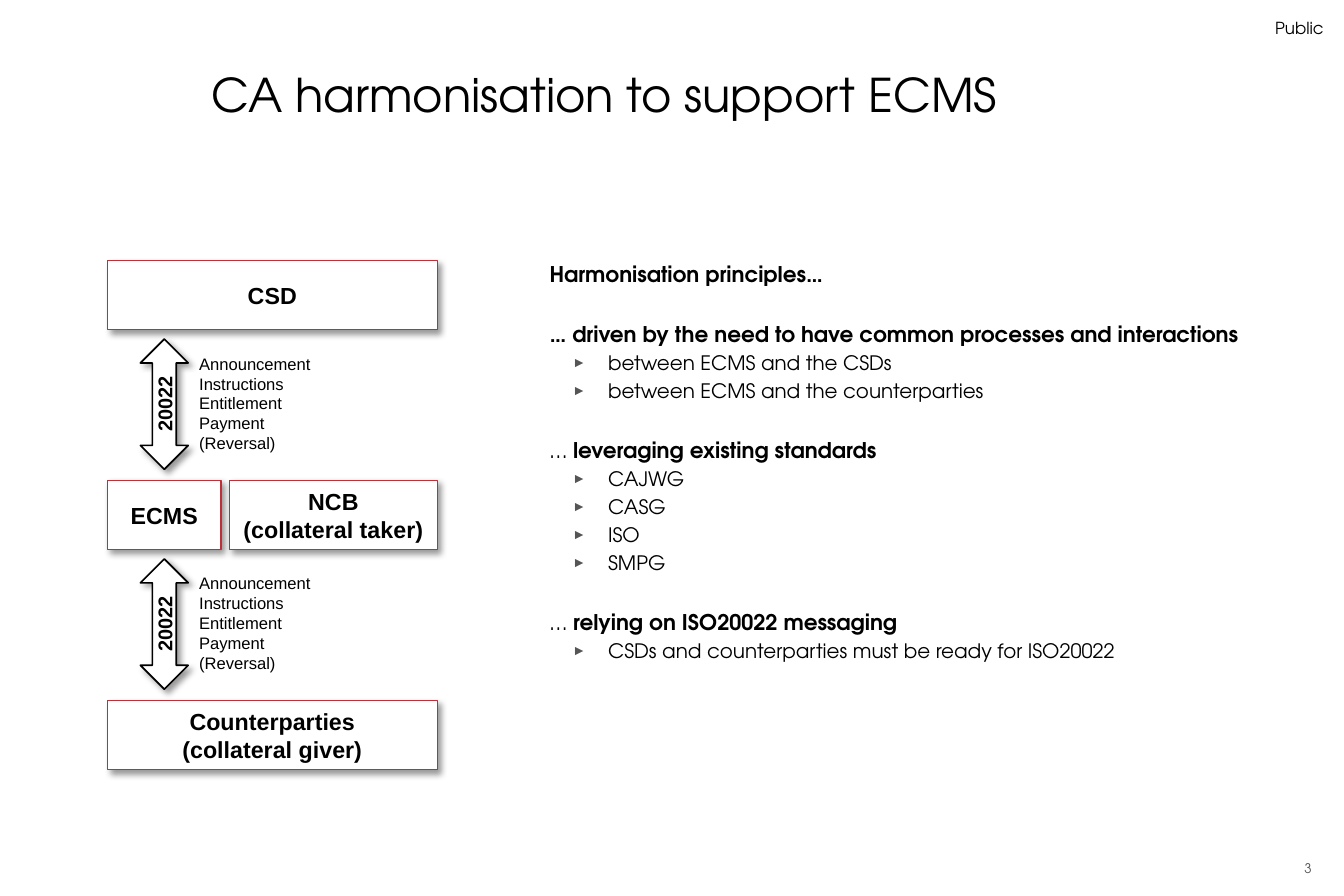
from dataclasses import dataclass
from typing import Any

from lxml.etree import SubElement
from pptx import Presentation
from pptx.dml.color import RGBColor
from pptx.enum.shapes import MSO_SHAPE
from pptx.enum.text import MSO_ANCHOR, MSO_AUTO_SIZE, PP_ALIGN
from pptx.oxml.ns import qn
from pptx.util import Pt

COLORS = {"text": "000000", "muted": "555555", "paper": "FFFFFF", "border": "BF2F38"}
BRAND_FONT = "TeX Gyre Adventor"
DIAGRAM_FONT = "Arial"
NO_MARGINS = dict.fromkeys(("margin_left", "margin_top", "margin_right", "margin_bottom"), 0)


@dataclass(frozen=True)
class Area:
    left: float
    top: float
    width: float
    height: float

    def emu(self) -> tuple:
        return tuple(Pt(n) for n in (self.left, self.top, self.width, self.height))


@dataclass(frozen=True)
class Style:
    size: float
    face: str = BRAND_FONT
    bold: bool = False
    color: str = "text"


@dataclass(frozen=True)
class Party:
    area: Area
    lines: tuple


@dataclass(frozen=True)
class Principle:
    lead: str
    heading: str
    points: tuple = ()
    bold_lead: bool = False


def set_values(target: Any, values: dict) -> None:
    for key, value in values.items():
        setattr(target, key, value)


def add_run(paragraph: Any, text: str, style: Style) -> None:
    run = paragraph.add_run()
    run.text = text
    set_values(run.font, {"size": Pt(style.size), "name": style.face, "bold": style.bold})
    run.font.color.rgb = RGBColor.from_string(COLORS[style.color])


def next_paragraph(frame: Any) -> Any:
    first = frame.paragraphs[0]
    return frame.add_paragraph() if first.runs else first


def write_lines(frame: Any, lines: tuple, style: Style, layout: dict) -> None:
    for line in lines:
        paragraph = next_paragraph(frame)
        set_values(paragraph, layout)
        add_run(paragraph, line, style)


def add_text(slide: Any, area: Area, lines: tuple, style: Style,
             frame_format: dict, layout: dict) -> None:
    frame = slide.shapes.add_textbox(*area.emu()).text_frame
    set_values(frame, frame_format)
    write_lines(frame, lines, style, layout)


def add_shadow(shape: Any) -> None:
    shape.shadow.inherit = False
    effects = shape._element.spPr.find(qn("a:effectLst"))
    shadow = SubElement(effects, qn("a:outerShdw"), blurRad=str(Pt(4)), dist=str(Pt(3)),
                        dir=str(45 * 60000), algn="tl", rotWithShape="0")
    color = SubElement(shadow, qn("a:srgbClr"), val=COLORS["text"])
    SubElement(color, qn("a:alpha"), val="40000")


def add_block(slide: Any, preset: MSO_SHAPE, area: Area, lines: tuple, style: Style,
              border: str, weight: float, rotation: float = 0) -> None:
    block = slide.shapes.add_shape(preset, *area.emu())
    block.rotation = rotation
    block.fill.solid()
    block.fill.fore_color.rgb = RGBColor.from_string(COLORS["paper"])
    block.line.color.rgb = RGBColor.from_string(COLORS[border])
    block.line.width = Pt(weight)
    add_shadow(block)
    set_values(block.text_frame, {"vertical_anchor": MSO_ANCHOR.MIDDLE, "word_wrap": True})
    write_lines(block.text_frame, lines, style, {"alignment": PP_ALIGN.CENTER})


def add_bullet(paragraph: Any) -> None:
    properties = paragraph._p.get_or_add_pPr()
    properties.set("marL", str(Pt(35.3)))
    properties.set("indent", str(Pt(-21.6)))
    color = SubElement(properties, qn("a:buClr"))
    SubElement(color, qn("a:srgbClr"), val=COLORS["muted"])
    SubElement(properties, qn("a:buSzPct"), val="70000")
    SubElement(properties, qn("a:buFont"), typeface=DIAGRAM_FONT)
    SubElement(properties, qn("a:buChar"), char="►")


def add_principles(slide: Any, area: Area, principles: tuple) -> None:
    frame = slide.shapes.add_textbox(*area.emu()).text_frame
    set_values(frame, {**NO_MARGINS, "word_wrap": True})
    for index, principle in enumerate(principles):
        heading = next_paragraph(frame)
        heading.space_before = Pt(20.8 if index else 0)
        if principle.lead:
            add_run(heading, principle.lead, Style(13, bold=principle.bold_lead))
        add_run(heading, principle.heading, Style(13, bold=True))
        for point in principle.points:
            item = frame.add_paragraph()
            add_bullet(item)
            set_values(item, {"level": 1, "space_before": Pt(2.4)})
            add_run(item, point, Style(12))


# Diagram geometry: three tiers with two message flows between them
LEFT, TOP, WIDTH, HEIGHT, PITCH = 64.8, 157, 198.7, 41.8, 132.5
TAKER_LEFT = 138.4
PARTIES = (
    Party(Area(LEFT, TOP, WIDTH, HEIGHT), ("CSD",)),
    Party(Area(LEFT, TOP + PITCH, 68.4, HEIGHT), ("ECMS",)),
    Party(Area(TAKER_LEFT, TOP + PITCH, LEFT + WIDTH - TAKER_LEFT, HEIGHT),
          ("NCB", "(collateral taker)")),
    Party(Area(LEFT, TOP + 2 * PITCH, WIDTH, HEIGHT), ("Counterparties", "(collateral giver)")),
)
MESSAGES = ("Announcement", "Instructions", "Entitlement", "Payment", "(Reversal)")
PRINCIPLES = (
    Principle("", "Harmonisation principles…"),
    Principle("… ", "driven by the need to have common processes and interactions",
              ("between ECMS and the CSDs", "between ECMS and the counterparties"), True),
    Principle("… ", "leveraging existing standards", ("CAJWG", "CASG", "ISO", "SMPG")),
    Principle("… ", "relying on ISO20022 messaging",
              ("CSDs and counterparties must be ready for ISO20022",)),
)


def main() -> None:
    deck = Presentation()
    set_values(deck, {"slide_width": Pt(810), "slide_height": Pt(540)})
    slide = deck.slides.add_slide(deck.slide_layouts[6])
    fitted = {"word_wrap": False, "auto_size": MSO_AUTO_SIZE.SHAPE_TO_FIT_TEXT}

    # Classification, title and page number
    add_text(slide, Area(768.2, 9.4, 29.5, 12.2), ("Public",), Style(10),
             {**NO_MARGINS, **fitted}, {"alignment": PP_ALIGN.RIGHT, "line_spacing": 1.1})
    add_text(slide, Area(127.4, 39.6, 573.8, 56.9), ("CA harmonisation to support ECMS",),
             Style(28), {**NO_MARGINS, "word_wrap": True}, {})
    add_text(slide, Area(767.5, 514.1, 30.2, 17.3), ("3",), Style(8, color="muted"),
             {"word_wrap": True, "vertical_anchor": MSO_ANCHOR.BOTTOM},
             {"alignment": PP_ALIGN.RIGHT})

    # Parties
    for party in PARTIES:
        add_block(slide, MSO_SHAPE.RECTANGLE, party.area, party.lines,
                  Style(14, DIAGRAM_FONT, True), "border", 0.75)

    # Message flows
    for tier in range(2):
        drop = tier * PITCH
        add_block(slide, MSO_SHAPE.LEFT_RIGHT_ARROW, Area(59.8, 229.2 + drop, 78.5, 28.8),
                  ("20022",), Style(12, DIAGRAM_FONT, True), "text", 1, 270)
        add_text(slide, Area(113, 209.5 + drop, 82.1, 67.7), MESSAGES,
                 Style(10, DIAGRAM_FONT), fitted, {})

    # Harmonisation principles
    add_principles(slide, Area(331.2, TOP, 430.6, 313.2), PRINCIPLES)

    deck.save("out.pptx")


if __name__ == "__main__":
    main()
